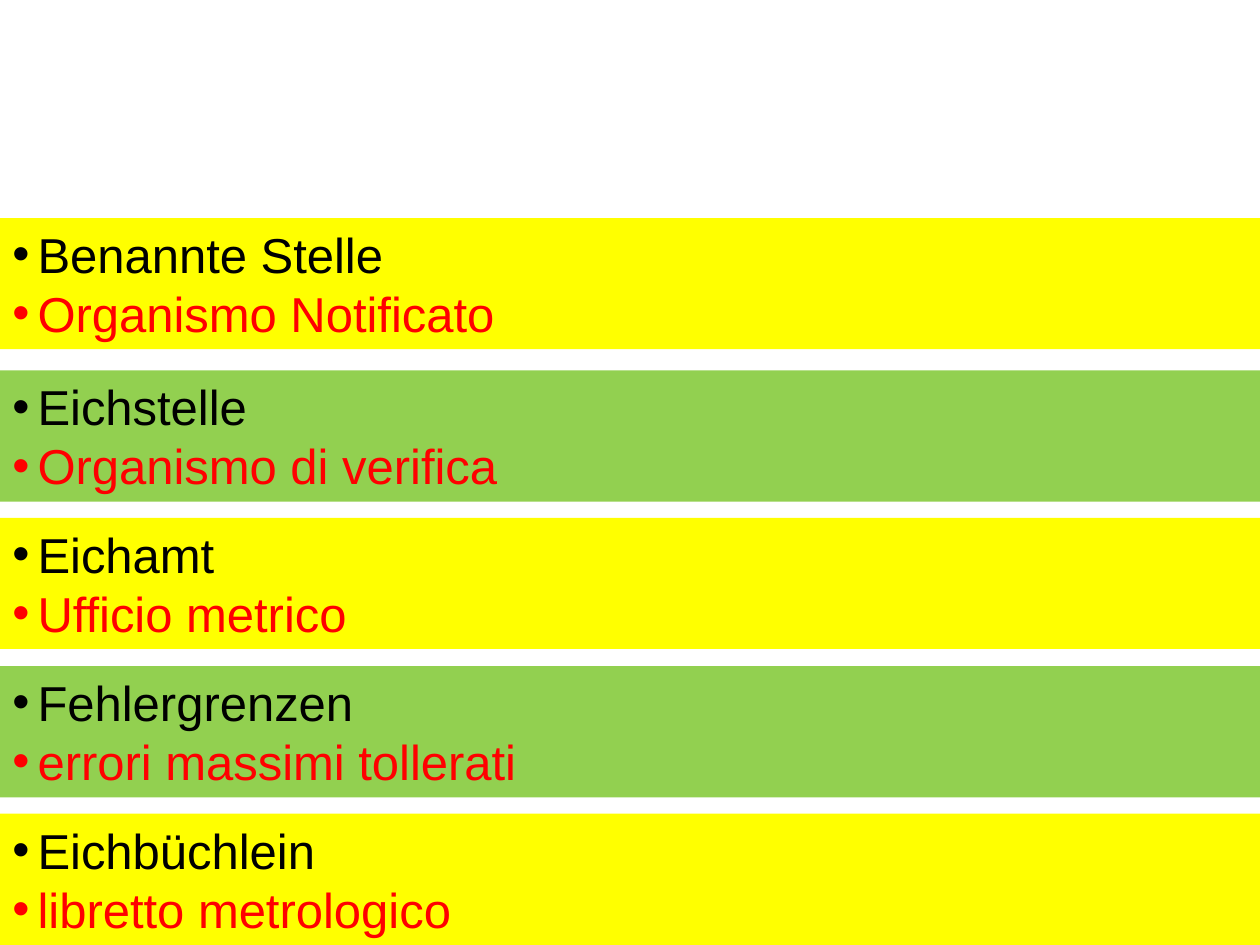
from pptx import Presentation
from pptx.dml.color import RGBColor
from pptx.enum.shapes import MSO_SHAPE
from pptx.enum.text import MSO_ANCHOR, PP_ALIGN
from pptx.oxml.ns import qn
from pptx.util import Pt

RECT = MSO_SHAPE.RECTANGLE
TOP = MSO_ANCHOR.TOP
LEFT = PP_ALIGN.LEFT

SLIDE_W, SLIDE_H = 720, 540
BAND_H = 75
BLACK, RED = "000000", "FF0000"
YELLOW, GREEN = "FFFF00", "92D050"

TERMS = [
    (124.6, "Benannte Stelle", "Organismo Notificato"),
    (211.7, "Eichstelle", "Organismo di verifica"),
    (295.9, "Eichamt", "Ufficio metrico"),
    (380.7, "Fehlergrenzen", "errori massimi tollerati"),
    (465, "Eichbüchlein", "libretto metrologico"),
]


def rgb(value):
    return RGBColor.from_string(value)


def add_bullet(p, indent):
    pPr = p._p.get_or_add_pPr()
    pPr.set("marL", str(Pt(indent)))
    pPr.set("indent", str(-Pt(indent)))
    font = pPr.makeelement(qn("a:buFont"), {"typeface": "Arial"})
    char = pPr.makeelement(qn("a:buChar"), {"char": "•"})
    pPr.extend([font, char])


def add_band(s, left, top, width, height, fill, german, italian):
    sp = s.shapes.add_shape(RECT, Pt(left), Pt(top), Pt(width), Pt(height))
    sp.shadow.inherit = False
    sp.fill.solid()
    sp.fill.fore_color.rgb = rgb(fill)
    sp.line.fill.background()
    tf = sp.text_frame
    tf.word_wrap = True
    tf.vertical_anchor = TOP
    tf.margin_left = tf.margin_right = Pt(7.2)
    tf.margin_top = tf.margin_bottom = Pt(3.6)
    for i, (text, color) in enumerate([(german, BLACK), (italian, RED)]):
        p = tf.add_paragraph() if i else tf.paragraphs[0]
        p.alignment = LEFT
        p.line_spacing = Pt(33.7)
        add_bullet(p, 14.4)
        r = p.add_run()
        r.text = text
        r.font.name = "Arial"
        r.font.size = Pt(28)
        r.font.color.rgb = rgb(color)


def main():
    prs = Presentation()
    prs.slide_width, prs.slide_height = Pt(SLIDE_W), Pt(SLIDE_H)
    s = prs.slides.add_slide(prs.slide_layouts[6])
    for i, (top, german, italian) in enumerate(TERMS):
        fill = GREEN if i % 2 else YELLOW
        add_band(s, 0, top, SLIDE_W, BAND_H, fill, german, italian)
    prs.save("out.pptx")


if __name__ == "__main__":
    main()
